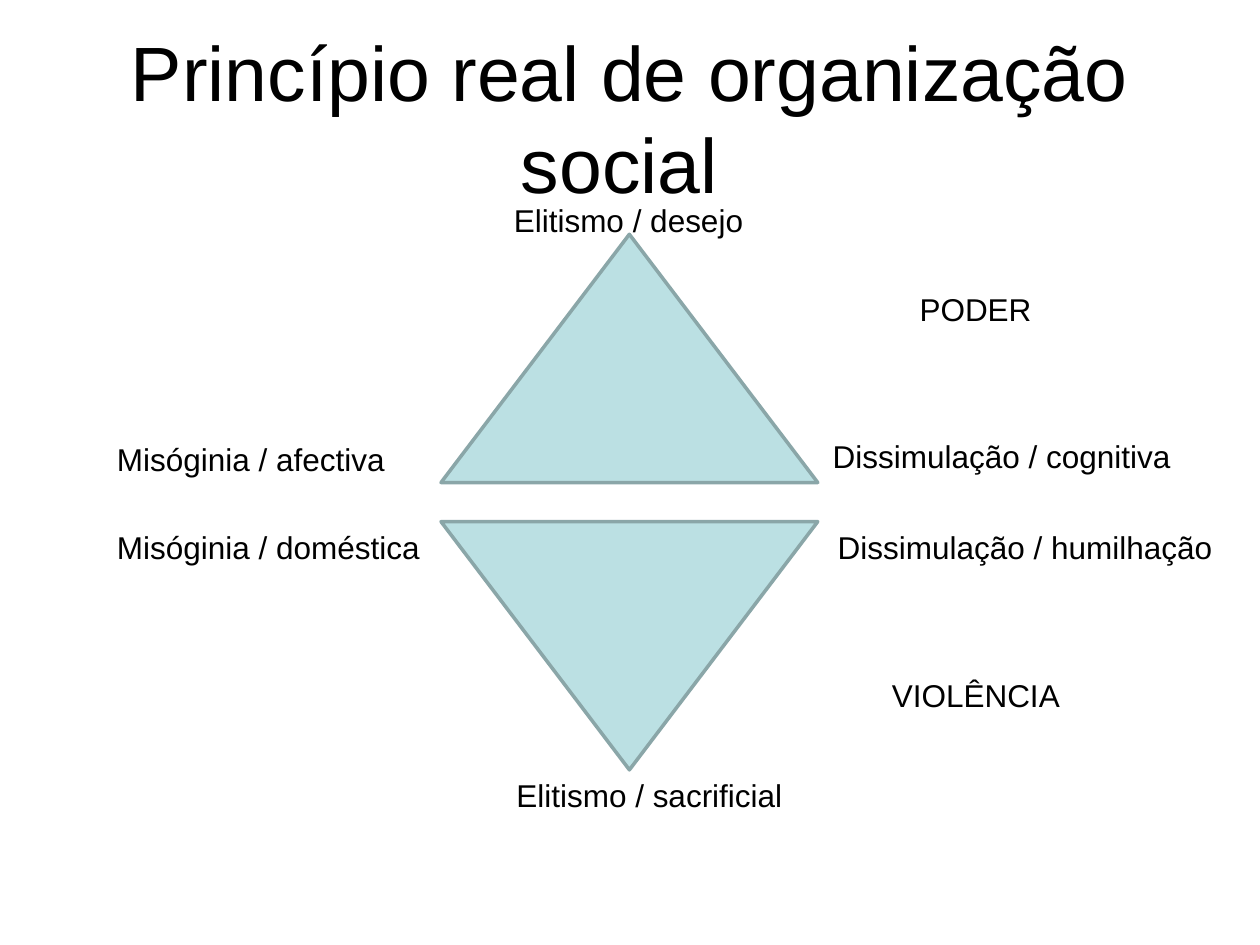
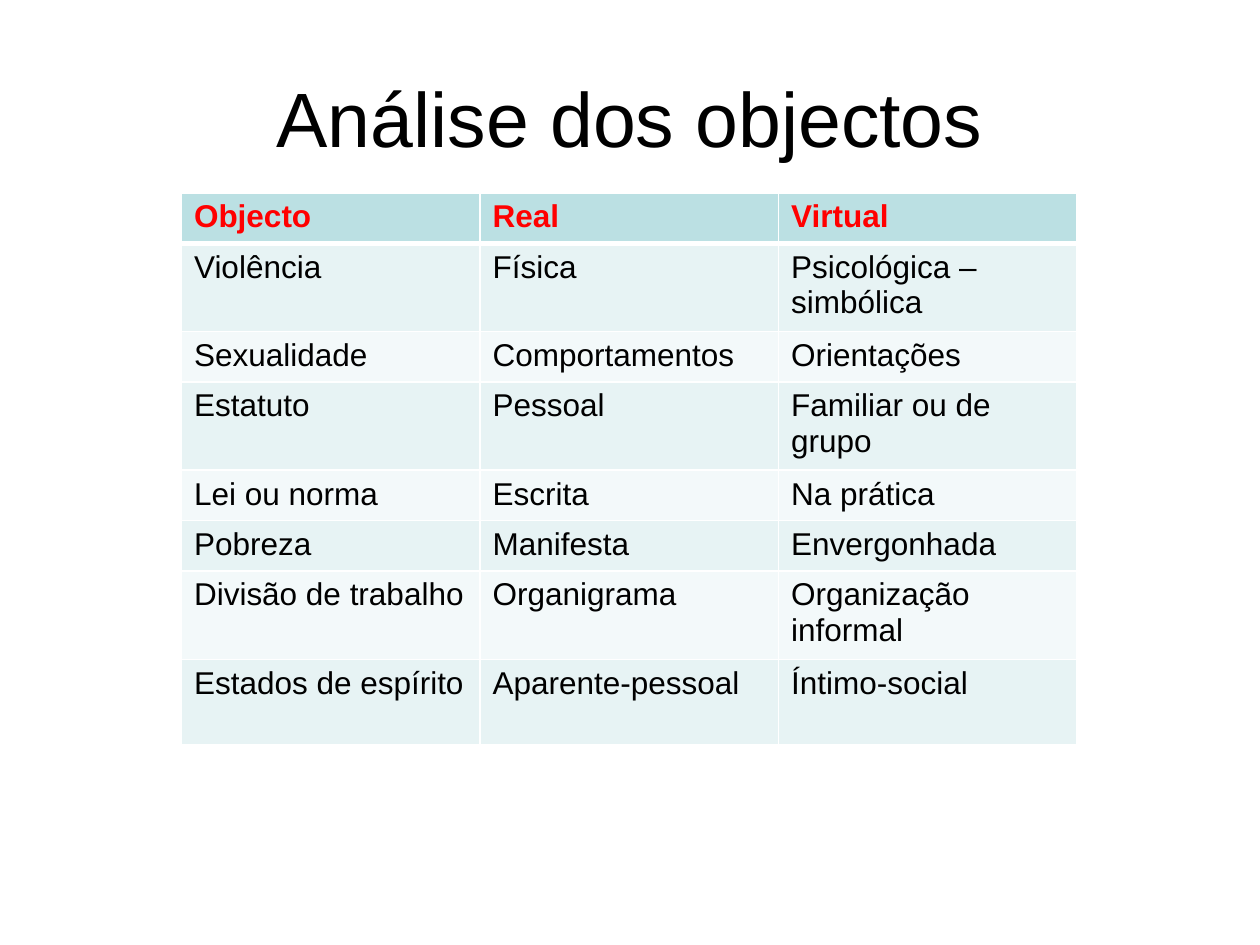
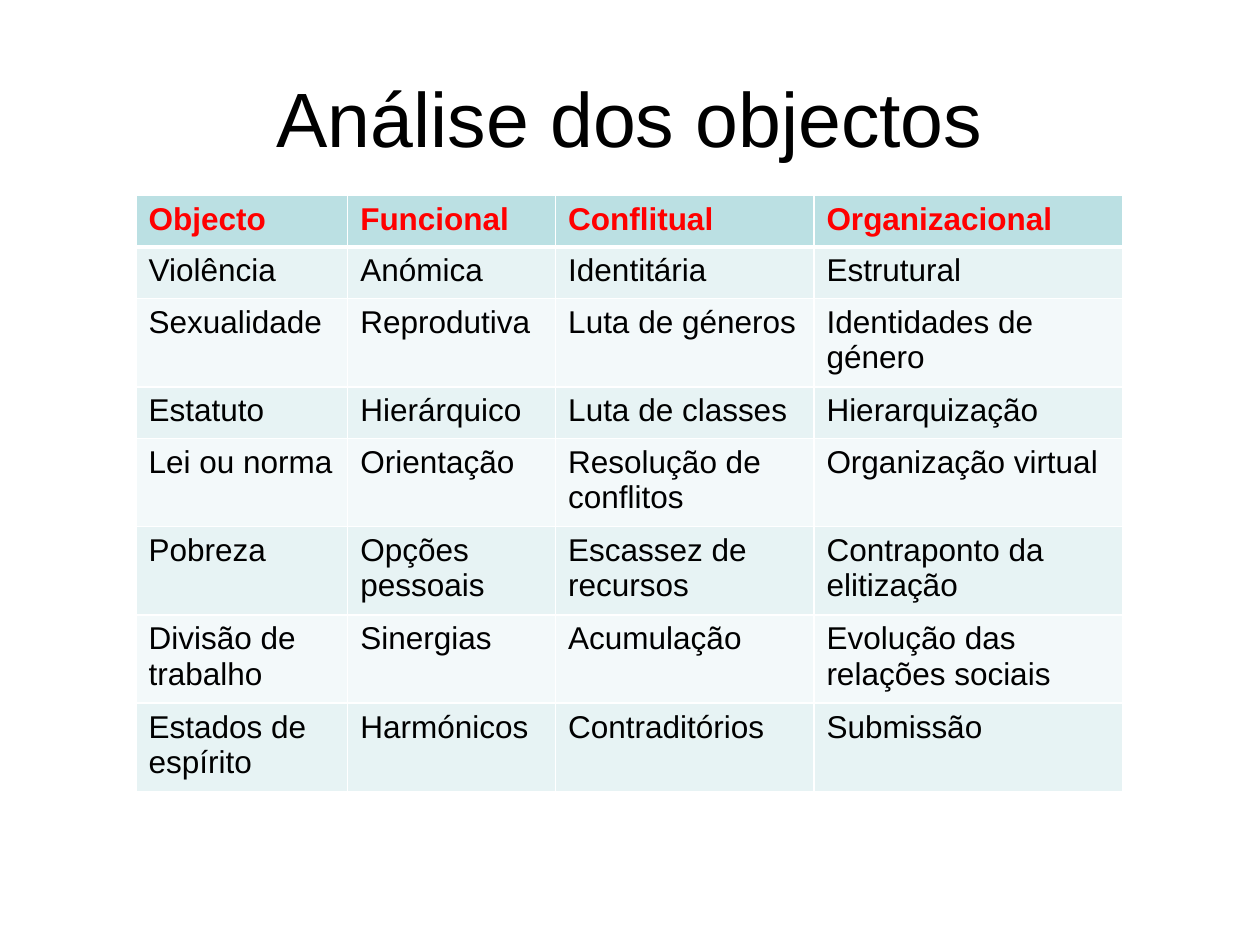
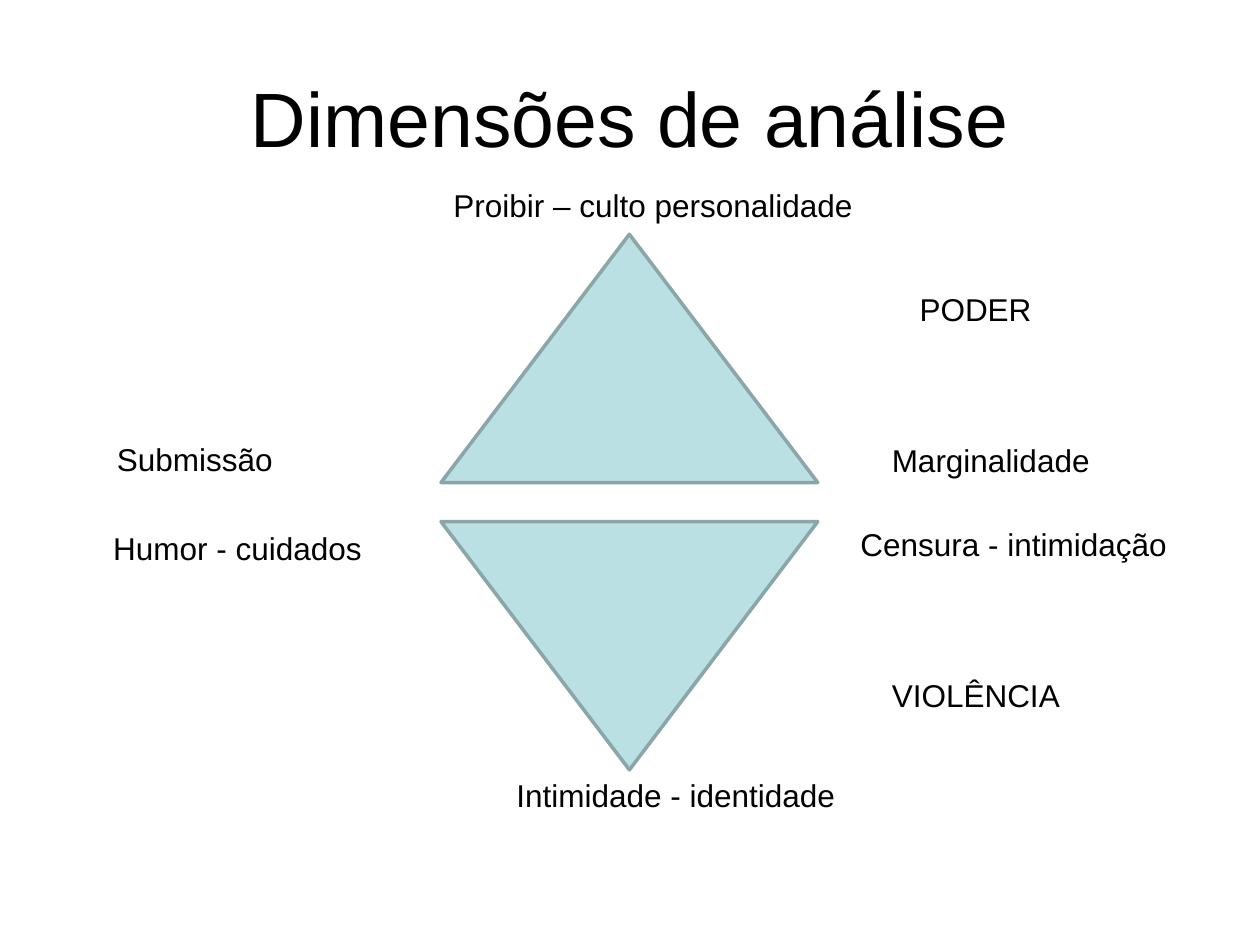
from typing import NamedTuple

import lxml.etree
import pptx
import pptx.dml.color
import pptx.enum.shapes
import pptx.enum.text
import pptx.oxml.ns
import pptx.util

EMU_PER_PX = 9144  # 100 px to the inch
FONT = "Arial"
BLACK = pptx.dml.color.RGBColor(0x00, 0x00, 0x00)
WHITE = pptx.dml.color.RGBColor(0xFF, 0xFF, 0xFF)
RED = pptx.dml.color.RGBColor(0xFF, 0x00, 0x00)
AQUA = pptx.dml.color.RGBColor(0xBB, 0xE0, 0xE3)
AQUA_OUTLINE = pptx.dml.color.RGBColor(0x8A, 0xA6, 0xA8)
ODD_ROW = pptx.dml.color.RGBColor(0xE7, 0xF3, 0xF4)
EVEN_ROW = pptx.dml.color.RGBColor(0xF3, 0xF9, 0xFA)

BODY_SIZE = 18
LABEL_HEIGHT = 40


class Box(NamedTuple):
    left: int
    top: int
    width: int
    height: int


class Label(NamedTuple):
    text: str
    left: int
    top: int
    width: int


class TrianglesSlide(NamedTuple):
    title: str
    labels: list[Label]


class TableSlide(NamedTuple):
    title: str
    box: Box
    column_widths: list[int]
    row_heights: list[int]
    rows: list[list[str]]


TITLE_BOX = Box(50, 30, 900, 125)
TRIANGLES = [(Box(350, 186, 299, 197), 0), (Box(350, 414, 299, 197), 180)]
SHARED_LABELS = [Label("PODER", 720, 225, 110), Label("VIOLÊNCIA", 698, 532, 155)]

SLIDES = [
    TrianglesSlide(
        "Princípio real de organização social ",
        [
            Label("Misóginia / afectiva", 83, 344, 235),
            Label("Dissimulação / cognitiva", 651, 342, 291),
            Label("Elitismo / desejo", 398, 155, 204),
            Label("Elitismo / sacrificial", 400, 611, 233),
            Label("Misóginia / doméstica", 83, 414, 263),
            Label("Dissimulação / humilhação", 655, 414, 320),
        ],
    ),
    TableSlide(
        "Análise dos objectos",
        Box(144, 153, 711, 438),
        [237] * 3,
        [40, 68, 40, 68, 40, 40, 68, 68],
        [
            ["Objecto", "Real", "Virtual"],
            ["Violência", "Física", "Psicológica – simbólica"],
            ["Sexualidade", "Comportamentos", "Orientações"],
            ["Estatuto", "Pessoal", "Familiar ou de grupo"],
            ["Lei ou norma", "Escrita", "Na prática"],
            ["Pobreza", "Manifesta", "Envergonhada"],
            ["Divisão de trabalho", "Organigrama", "Organização informal"],
            ["Estados de espírito", "Aparente-pessoal", "Íntimo-social"],
        ],
    ),
    TableSlide(
        "Análise dos objectos",
        Box(108, 155, 783, 472),
        [168, 165, 205, 245],
        [41] * 8,
        [
            ["Objecto", "Funcional", "Conflitual", "Organizacional"],
            ["Violência", "Anómica", "Identitária", "Estrutural"],
            ["Sexualidade", "Reprodutiva", "Luta de géneros", "Identidades de género"],
            ["Estatuto", "Hierárquico", "Luta de classes", "Hierarquização"],
            ["Lei ou norma", "Orientação", "Resolução de conflitos", "Organização virtual"],
            ["Pobreza", "Opções pessoais", "Escassez de recursos", "Contraponto da elitização"],
            ["Divisão de trabalho", "Sinergias", "Acumulação", "Evolução das relações sociais"],
            ["Estados de espírito", "Harmónicos", "Contraditórios", "Submissão"],
        ],
    ),
    TrianglesSlide(
        "Dimensões de análise",
        [
            Label("Submissão", 83, 344, 145),
            Label("Marginalidade", 698, 345, 186),
            Label("Proibir – culto personalidade", 350, 143, 340),
            Label("Intimidade - identidade", 400, 611, 275),
            Label("Censura - intimidação", 673, 412, 266),
            Label("Humor - cuidados", 80, 415, 219),
        ],
    ),
]


def px(length: int) -> pptx.util.Emu:
    return pptx.util.Emu(length * EMU_PER_PX)


def place(box: Box) -> list[pptx.util.Emu]:
    return [px(length) for length in box]


def write_text(text_frame, text: str, size: int, color=BLACK, bold: bool = False):
    """Fill the first paragraph and return it."""
    paragraph = text_frame.paragraphs[0]
    paragraph.text = text
    paragraph.font.name = FONT
    paragraph.font.size = pptx.util.Pt(size)
    paragraph.font.bold = bold
    paragraph.font.color.rgb = color
    return paragraph


def add_title(slide, text: str) -> None:
    text_frame = slide.shapes.add_textbox(*place(TITLE_BOX)).text_frame
    text_frame.word_wrap = True
    text_frame.vertical_anchor = pptx.enum.text.MSO_ANCHOR.MIDDLE
    paragraph = write_text(text_frame, text, 44)
    paragraph.alignment = pptx.enum.text.PP_ALIGN.CENTER


def add_label(slide, label: Label) -> None:
    box = Box(label.left, label.top, label.width, LABEL_HEIGHT)
    text_frame = slide.shapes.add_textbox(*place(box)).text_frame
    text_frame.word_wrap = False
    text_frame.auto_size = pptx.enum.text.MSO_AUTO_SIZE.SHAPE_TO_FIT_TEXT
    write_text(text_frame, label.text, BODY_SIZE)


def add_triangle(slide, box: Box, rotation: int) -> None:
    triangle = slide.shapes.add_shape(
        pptx.enum.shapes.MSO_SHAPE.ISOSCELES_TRIANGLE, *place(box)
    )
    triangle.rotation = rotation
    triangle.shadow.inherit = False
    triangle.fill.solid()
    triangle.fill.fore_color.rgb = AQUA
    triangle.line.color.rgb = AQUA_OUTLINE
    triangle.line.width = pptx.util.Pt(2)


def set_borders(cell, top: int, bottom: int) -> None:
    """Draw white borders; top and bottom are widths in points."""
    qn = pptx.oxml.ns.qn
    properties = cell._tc.get_or_add_tcPr()
    for side, width in (("L", 1), ("R", 1), ("T", top), ("B", bottom)):
        line = lxml.etree.SubElement(
            properties, qn(f"a:ln{side}"), w=str(pptx.util.Pt(width))
        )
        fill = lxml.etree.SubElement(line, qn("a:solidFill"))
        lxml.etree.SubElement(fill, qn("a:srgbClr"), val=str(WHITE))


def add_table(slide, content: TableSlide) -> None:
    frame = slide.shapes.add_table(
        len(content.rows), len(content.column_widths), *place(content.box)
    )
    table = frame.table
    table.horz_banding = False
    for column, width in zip(table.columns, content.column_widths):
        column.width = px(width)
    for row, height in zip(table.rows, content.row_heights):
        row.height = px(height)
    frame.height = px(content.box.height)
    for row_index, texts in enumerate(content.rows):
        is_header = row_index == 0
        row_fill = AQUA if is_header else ODD_ROW if row_index % 2 else EVEN_ROW
        for column_index, text in enumerate(texts):
            cell = table.cell(row_index, column_index)
            set_borders(cell, 3 if row_index == 1 else 1, 3 if is_header else 1)
            cell.fill.solid()
            cell.fill.fore_color.rgb = row_fill
            color = RED if is_header else BLACK
            write_text(cell.text_frame, text, BODY_SIZE, color, is_header)


def add_triangles(slide, content: TrianglesSlide) -> None:
    for box, rotation in TRIANGLES:
        add_triangle(slide, box, rotation)
    for label in content.labels + SHARED_LABELS:
        add_label(slide, label)


def main() -> None:
    presentation = pptx.Presentation()
    presentation.slide_width = px(1000)
    presentation.slide_height = px(750)
    blank_layout = presentation.slide_layouts[6]
    for content in SLIDES:
        slide = presentation.slides.add_slide(blank_layout)
        add_title(slide, content.title)
        if isinstance(content, TableSlide):
            add_table(slide, content)
        else:
            add_triangles(slide, content)
    presentation.save("out.pptx")


if __name__ == "__main__":
    main()
